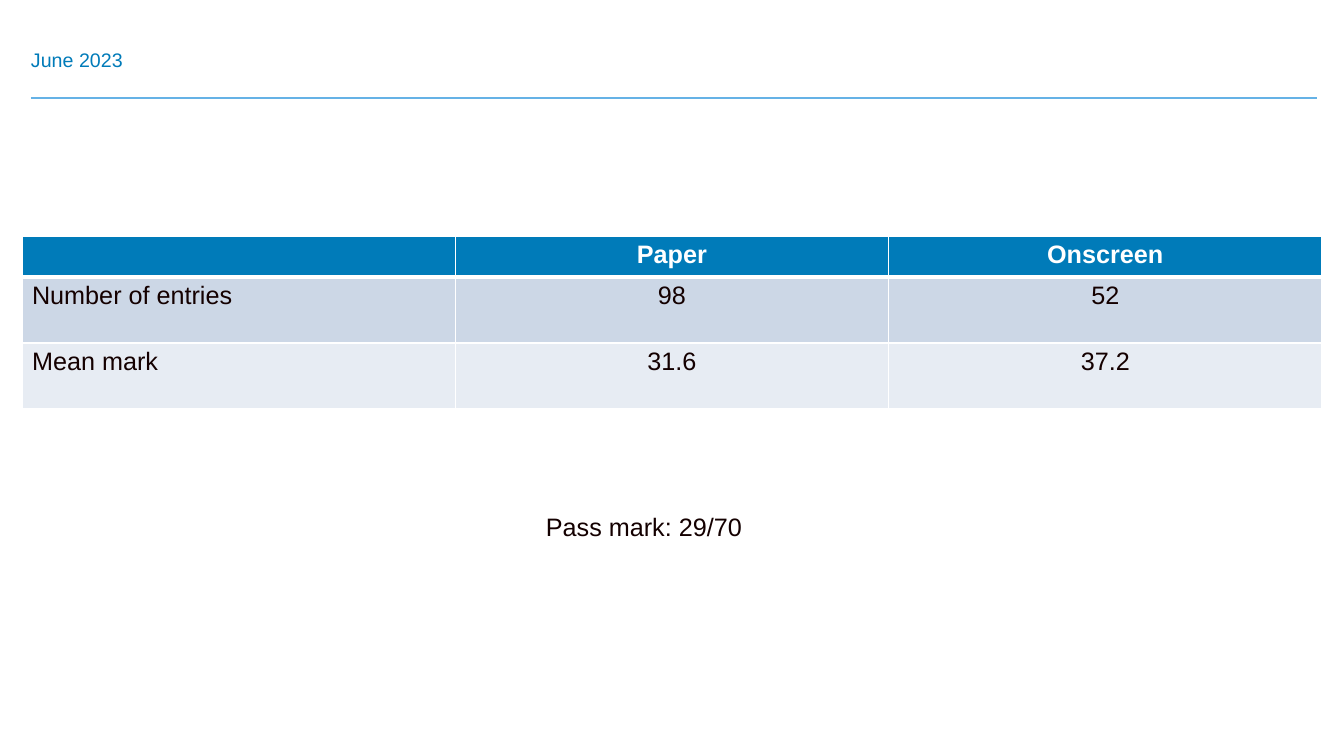
"""Build the June 2023 results slide with its entry table."""
from lxml.etree import SubElement as Sub
from pptx import Presentation as Deck
from pptx.dml.color import RGBColor as Rgb
from pptx.enum.shapes import MSO_CONNECTOR as Conn
from pptx.enum.text import MSO_ANCHOR as Anchor, MSO_AUTO_SIZE as Auto, PP_ALIGN as Align
from pptx.oxml.ns import qn
from pptx.util import Pt

SCALE = 914400 / 100.8
BLUE, SKY, INK, WHITE = "007BB9", "65B2E6", "140000", "FFFFFF"
BANDS = ["CCD7E6", "E7ECF3"]


def px(*nums):
    return [round(n * SCALE) for n in nums]


def tint(code):
    return Rgb.from_string(code)


def write(frame, text, size=18, color=INK, bold=False, align=Align.LEFT, lead=None):
    para = frame.paragraphs[0]
    para.alignment = align
    if lead:
        para.line_spacing = lead
    run = para.add_run()
    run.text = text
    font = run.font
    font.name, font.size, font.bold = "Arial", Pt(size), bold
    font.color.rgb = tint(color)


def edge(cell, side, width, color=WHITE):
    line = Sub(cell._tc.get_or_add_tcPr(), qn(f"a:ln{side}"), w=str(Pt(width)))
    Sub(Sub(line, qn("a:solidFill")), qn("a:srgbClr"), val=color)


class Page:
    def __init__(self, deck):
        self.slide = deck.slides.add_slide(deck.slide_layouts[5])
        self.shapes = self.slide.shapes

    def title(self, text, box):
        head = self.shapes.title
        head.left, head.top, head.width, head.height = px(*box)
        frame = head.text_frame
        frame.auto_size = Auto.NONE
        frame.word_wrap = True
        frame.vertical_anchor = Anchor.BOTTOM
        frame.margin_left = frame.margin_right = 0
        frame.margin_top = frame.margin_bottom = 0
        write(frame, text, size=14, color=BLUE, align=Align.JUSTIFY, lead=0.9)

    def rule(self, ends):
        line = self.shapes.add_connector(Conn.STRAIGHT, *px(*ends))
        line.line.color.rgb = tint(SKY)
        line.line.width = Pt(1.75)
        Sub(line._element.spPr, qn("a:effectLst"))

    def table(self, rows, box, highs):
        grid = self.shapes.add_table(len(rows), len(rows[0]), *px(*box)).table
        for r, (row, high) in enumerate(zip(rows, highs)):
            grid.rows[r].height = px(high)[0]
            for c, text in enumerate(row):
                cell = grid.cell(r, c)
                for side in "LRTB":
                    thick = (r, side) in [(0, "B"), (1, "T")]
                    edge(cell, side, 3 if thick else 1)
                cell.fill.solid()
                cell.fill.fore_color.rgb = tint(BANDS[(r - 1) % 2] if r else BLUE)
                if text:
                    write(cell.text_frame, text, color=INK if r else WHITE,
                          bold=r == 0, align=Align.CENTER if c else Align.LEFT)

    def note(self, text, box):
        frame = self.shapes.add_textbox(*px(*box)).text_frame
        frame.word_wrap = True
        frame.auto_size = Auto.SHAPE_TO_FIT_TEXT
        write(frame, text)


def main():
    deck = Deck()
    deck.slide_width, deck.slide_height = px(1344, 756)
    page = Page(deck)
    page.rule((31, 98, 1317, 98))
    page.title("June 2023", (31, 23, 1127, 49))
    rows = [
        ["", "Paper", "Onscreen"],
        ["Number of entries", "98", "52"],
        ["Mean mark", "31.6", "37.2"],
    ]
    page.table(rows, (22, 236, 1300, 173), [41, 66, 66])
    page.note("Pass mark: 29/70", (536, 506, 272, 40))
    deck.save("out.pptx")


if __name__ == "__main__":
    main()
